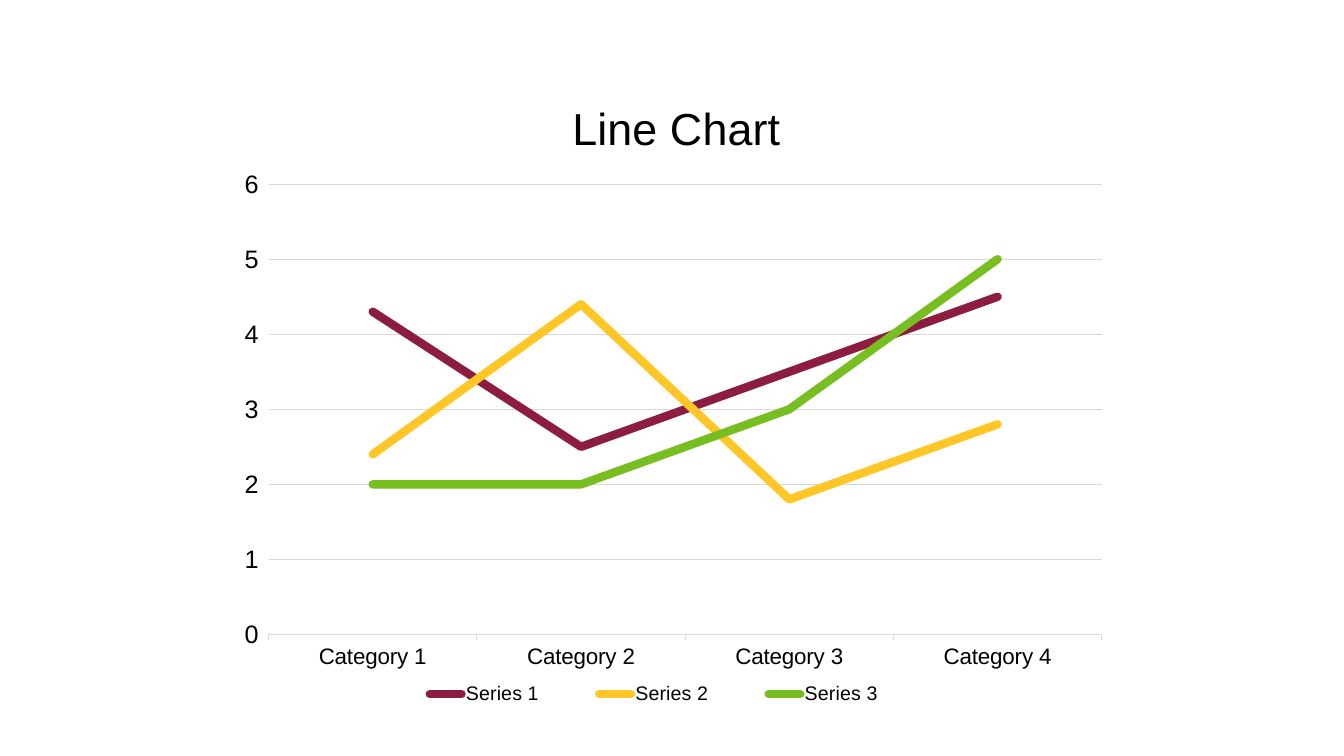
from lxml import etree
from pptx import Presentation
from pptx import util as u
from pptx.chart import data as cd
from pptx.dml import color as dc
from pptx.enum import chart as ec

FACE = "Arial"
GREY = "D9D9D9"
CATS = ["Category 1", "Category 2", "Category 3", "Category 4"]
SERIES = [
    ("Series 1", (4.3, 2.5, 3.5, 4.5), "8C1D40"),
    ("Series 2", (2.4, 4.4, 1.8, 2.8), "FFC627"),
    ("Series 3", (2, 2, 3, 5), "78BE20"),
]
NS = "http://schemas.openxmlformats.org/drawingml/2006/chart"


def rgb(code):
    return dc.RGBColor.from_string(code)


def set_font(font, size):
    font.name = FACE
    font.size = u.Pt(size)
    font.bold = False
    font.color.rgb = rgb("000000")


def set_line(line, code, width):
    line.color.rgb = rgb(code)
    line.width = u.Pt(width)


def place(chart, tag, index, **spots):
    """Fix a chart part at fractions of the chart's size."""
    part = chart.element.xpath(f".//c:{tag}")[0]
    for old in part.xpath("./c:layout"):
        part.remove(old)
    layout = etree.Element(f"{{{NS}}}layout")
    manual = etree.SubElement(layout, f"{{{NS}}}manualLayout")
    if tag == "plotArea":
        etree.SubElement(manual, f"{{{NS}}}layoutTarget").set("val", "inner")
    for key in ("xMode", "yMode"):
        etree.SubElement(manual, f"{{{NS}}}{key}").set("val", "edge")
    for key, val in spots.items():
        etree.SubElement(manual, f"{{{NS}}}{key}").set("val", str(val))
    part.insert(index, layout)


def add_lines(slide):
    data = cd.CategoryChartData()
    data.categories = CATS
    for name, vals, _ in SERIES:
        data.add_series(name, vals)
    frame = slide.shapes.add_chart(
        ec.XL_CHART_TYPE.LINE, u.Cm(5.64), u.Cm(1.47), u.Cm(22.58), u.Cm(16.69), data)
    chart = frame.chart
    set_font(chart.font, 10)
    chart.plots[0].vary_by_categories = False
    for series, (_, _, code) in zip(chart.plots[0].series, SERIES):
        series.smooth = False
        series.marker.style = ec.XL_MARKER_STYLE.NONE
        set_line(series.format.line, code, 6)
    # Round line ends
    for line in chart.element.xpath(".//c:ser/c:spPr/a:ln"):
        line.set("cap", "rnd")
    return chart


def add_title(chart, words):
    frame = chart.chart_title.text_frame
    frame.text = words
    set_font(frame.paragraphs[0].runs[0].font, 32)
    place(chart, "title", 1, x=0.38, y=0.05)


def set_axes(chart):
    cat, val = chart.category_axis, chart.value_axis
    for axis, size in ((cat, 16), (val, 18)):
        axis.major_tick_mark = ec.XL_TICK_MARK.OUTSIDE
        axis.minor_tick_mark = ec.XL_TICK_MARK.NONE
        set_font(axis.tick_labels.font, size)
    set_line(cat.format.line, GREY, 0.75)
    val.format.line.fill.background()
    val.minimum_scale, val.maximum_scale, val.major_unit = 0, 6, 1
    set_line(val.major_gridlines.format.line, GREY, 0.25)


def add_legend(chart):
    chart.has_legend = True
    chart.legend.position = ec.XL_LEGEND_POSITION.BOTTOM
    chart.legend.include_in_layout = False
    set_font(chart.legend.font, 14)
    place(chart, "legend", 1, x=0.17, y=0.94, w=0.62, h=0.04)


def main():
    deck = Presentation()
    deck.slide_width, deck.slide_height = u.Cm(33.87), u.Cm(19.05)
    slide = deck.slides.add_slide(deck.slide_layouts[6])
    # Chart and its parts
    chart = add_lines(slide)
    add_title(chart, "Line Chart")
    set_axes(chart)
    add_legend(chart)
    place(chart, "plotArea", 0, x=0.05, y=0.19, w=0.93, h=0.68)
    deck.save("out.pptx")


if __name__ == "__main__":
    main()
